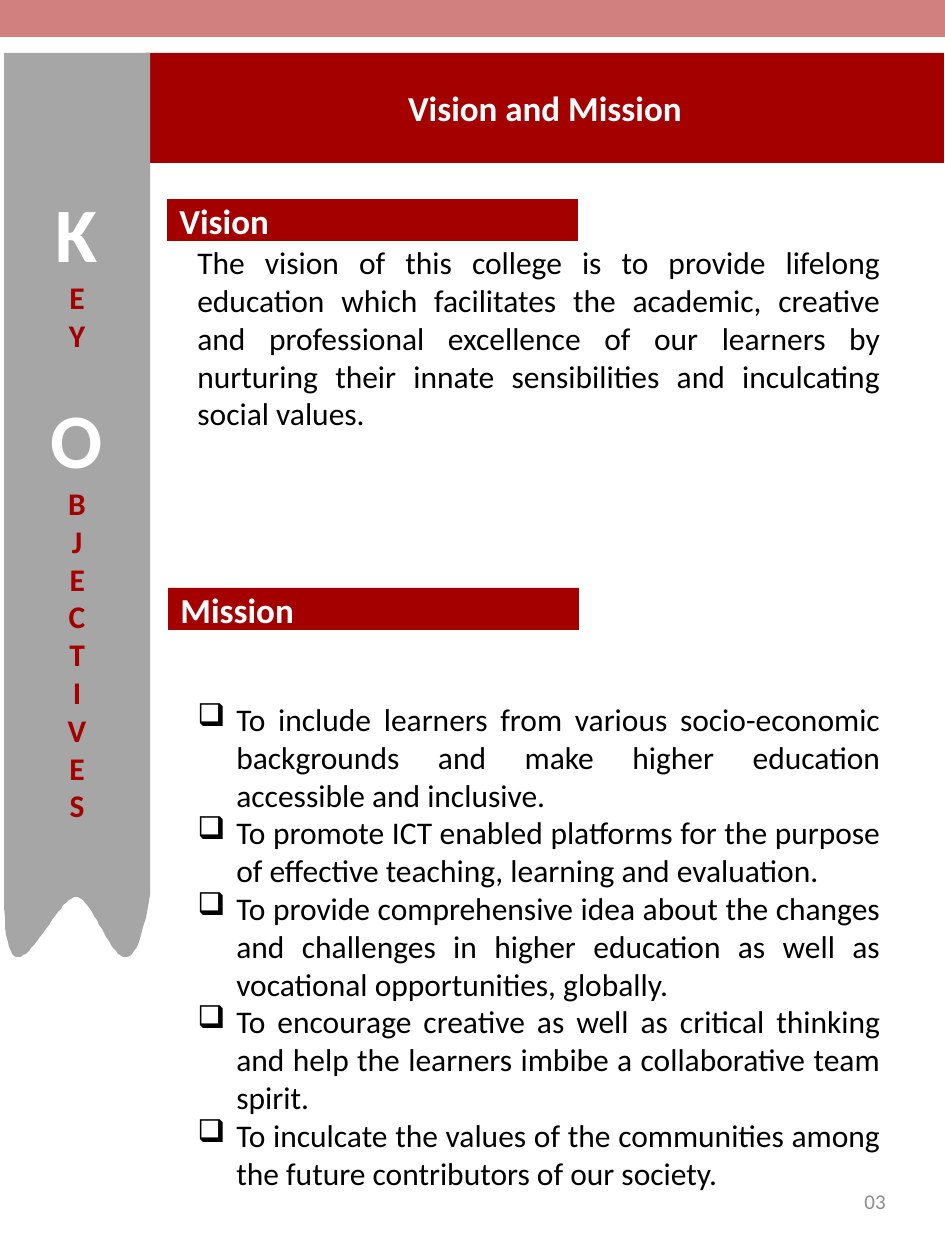
from lxml.etree import SubElement
from pptx import Presentation
from pptx.dml.color import RGBColor
from pptx.enum.shapes import MSO_SHAPE as Preset
from pptx.enum.text import MSO_ANCHOR as Anchor, PP_ALIGN as Align
from pptx.oxml.ns import qn
from pptx.util import Pt

SCALE = 914400 / 126
FONT = "Calibri"
RED, GREY, WHITE, BLACK = "A40000", "A6A6A6", "FFFFFF", "000000"

VISION = (
    "The vision of this college is to provide lifelong education which "
    "facilitates the academic, creative and professional excellence of our "
    "learners by nurturing their innate sensibilities and inculcating social values."
)
MISSION = [
    "To include learners from various socio-economic backgrounds and make "
    "higher education accessible and inclusive.",
    "To promote ICT enabled platforms for the purpose of effective teaching, "
    "learning and evaluation.",
    "To provide comprehensive idea about the changes and challenges in higher "
    "education as well as vocational opportunities, globally.",
    "To encourage creative as well as critical thinking and help the learners "
    "imbibe a collaborative team spirit.",
    "To inculcate the values of the communities among the future contributors "
    "of our society.",
]
RIBBON_LETTERS = [("K", 44, WHITE), ("EY ", 18, RED), ("O", 44, WHITE), ("BJECTIVES", 18, RED)]


def px(length):
    return round(length * SCALE)


def rgb(value):
    return RGBColor.from_string(value)


def style_run(run, size, color, bold=False):
    run.font.name = FONT
    run.font.size = Pt(size)
    run.font.bold = bold
    run.font.color.rgb = rgb(color)


def paint(shape, color):
    shape.shadow.inherit = False
    shape.fill.solid()
    shape.fill.fore_color.rgb = rgb(color)
    shape.line.fill.background()


def add_band(slide, box, color, alpha=None):
    band = slide.shapes.add_shape(Preset.RECTANGLE, *map(px, box))
    paint(band, color)
    if alpha is not None:
        tint = band._element.spPr.find(qn("a:solidFill")).find(qn("a:srgbClr"))
        SubElement(tint, qn("a:alpha"), val=str(alpha * 1000))
    return band


def write_line(shape, text, size, color, align, bold=False):
    frame = shape.text_frame
    frame.word_wrap = True
    frame.vertical_anchor = Anchor.MIDDLE
    frame.text = text
    line = frame.paragraphs[0]
    line.alignment = align
    style_run(line.runs[0], size, color, bold)


def add_heading(slide, text, box, align=Align.LEFT):
    write_line(add_band(slide, box, RED), text, 20, WHITE, align, True)


def curve(start, pull_start, pull_end, end, steps=32):
    points = []
    for step in range(1, steps + 1):
        t = step / steps
        weights = ((1 - t) ** 3, 3 * t * (1 - t) ** 2, 3 * t * t * (1 - t), t ** 3)
        corners = (start, pull_start, pull_end, end)
        points.append(tuple(sum(w * c[axis] for w, c in zip(weights, corners)) for axis in (0, 1)))
    return points


def add_ribbon(slide):
    right_tail, notch, left_tail = (150, 895), (76, 897), (4, 895)
    outline = slide.shapes.build_freeform(4, 53, scale=SCALE)
    outline.add_line_segments(
        [(150, 53), right_tail]
        + curve(right_tail, (127, 1034), (100, 897), notch)
        + curve(notch, (52, 897), (5, 1034), left_tail)
    )
    ribbon = outline.convert_to_shape()
    paint(ribbon, GREY)
    frame = ribbon.text_frame
    frame.word_wrap = True
    frame.vertical_anchor = Anchor.MIDDLE
    frame._txBody.bodyPr.set("vert", "wordArtVert")
    title = frame.paragraphs[0]
    title.alignment = Align.CENTER
    for letters, size, color in RIBBON_LETTERS:
        run = title.add_run()
        run.text = letters
        style_run(run, size, color, True)


def add_bullet(paragraph):
    properties = paragraph._p.get_or_add_pPr()
    properties.set("marL", str(px(39)))
    properties.set("indent", str(px(-39)))
    SubElement(properties, qn("a:buChar"), char="❑")


def add_statements(slide):
    frame = slide.shapes.add_textbox(*map(px, (185, 237, 708, 968))).text_frame
    frame.word_wrap = True
    frame.text = "\n".join([VISION] + MISSION)
    for paragraph in frame.paragraphs:
        paragraph.alignment = Align.JUSTIFY
        style_run(paragraph.runs[0], 18, BLACK)
    goals = frame.paragraphs[1:]
    for goal in goals:
        add_bullet(goal)
    goals[0].space_before = Pt(153)


def add_page_number(slide):
    number = slide.shapes.add_textbox(*map(px, (678, 1168, 220, 67)))
    write_line(number, "03", 12, "8C8C8C", Align.RIGHT)


def main():
    deck = Presentation()
    deck.slide_width, deck.slide_height = px(945), px(1260)
    slide = deck.slides.add_slide(deck.slide_layouts[6])
    add_band(slide, (-3, -2, 948, 39), RED, alpha=50)
    add_heading(slide, "Vision and Mission", (146, 53, 798, 110), Align.CENTER)
    add_ribbon(slide)
    add_statements(slide)
    add_heading(slide, "Vision", (167, 199, 411, 42))
    add_heading(slide, "Mission", (168, 588, 411, 42))
    add_page_number(slide)
    deck.save("out.pptx")


if __name__ == "__main__":
    main()
